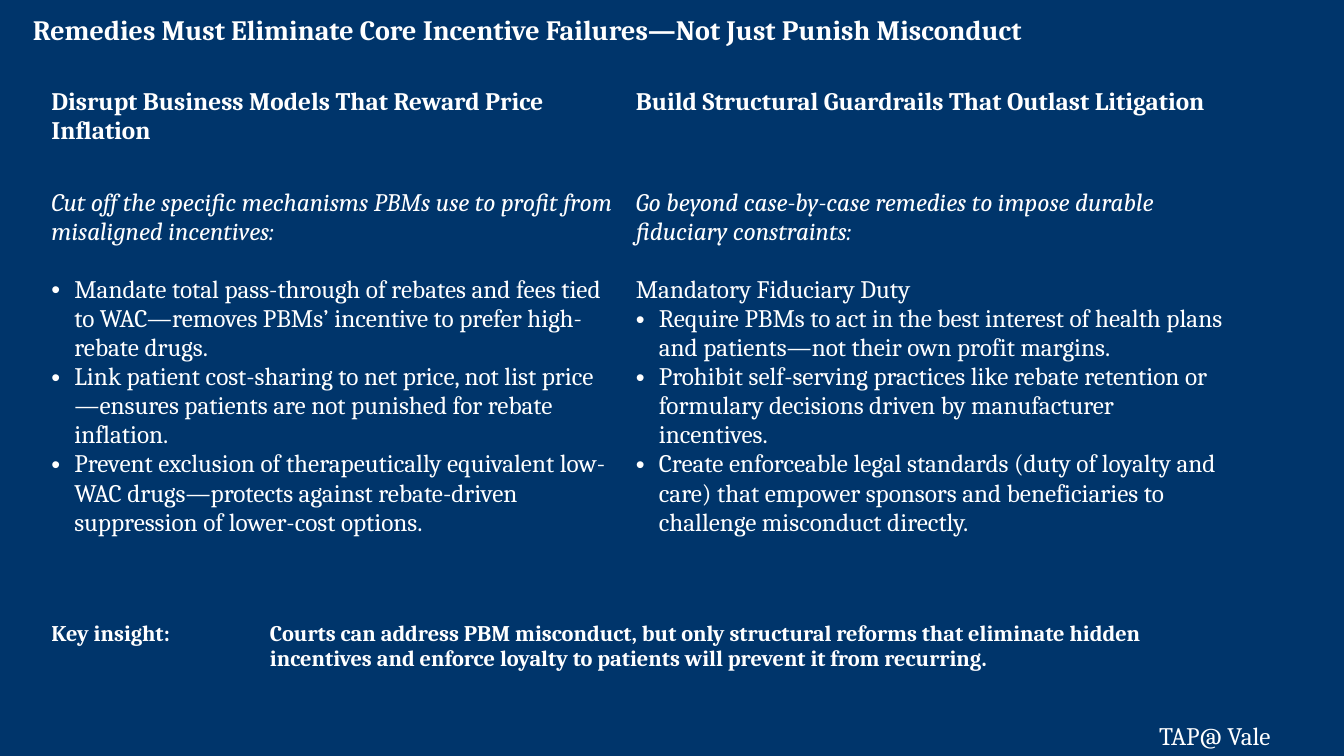
from lxml import etree
from pptx import Presentation
from pptx.dml.color import RGBColor
from pptx.oxml.ns import qn
from pptx.util import Cm, Pt

FONT = "Cambria"
WHITE = "FFFFFF"
NAVY = "00356B"
BLANK_LAYOUT = 6
NO_STYLE_NO_GRID = "{2D5ABB26-0587-4C30-8999-92F81FD0307C}"
TABLE_LEFT = Cm(1.04)
BULLET_INDENT = Cm(0.58)
LINE_GAP = Pt(20.8)


def write(para, text, size, bold=False, italic=False):
    para.text = text
    for span in para.runs:
        span.font.name = FONT
        span.font.size = Pt(size)
        span.font.bold = bold
        span.font.italic = italic
        span.font.color.rgb = RGBColor.from_string(WHITE)


def add_plain_table(page, top, widths, heights):
    frame = page.shapes.add_table(len(heights), len(widths), TABLE_LEFT, top,
                                  sum(widths), sum(heights))
    table = frame.table
    table.first_row = False
    table.horz_banding = False
    table._tbl.tblPr.find(qn("a:tableStyleId")).text = NO_STYLE_NO_GRID
    for column, width in zip(table.columns, widths):
        column.width = width
    for row, height in zip(table.rows, heights):
        row.height = height
    for cell in table.iter_cells():
        cell.fill.background()
    return table


# Deck and navy page
deck = Presentation()
deck.slide_width = Cm(33.87)
deck.slide_height = Cm(19.05)
page = deck.slides.add_slide(deck.slide_layouts[BLANK_LAYOUT])
page.background.fill.solid()
page.background.fill.fore_color.rgb = RGBColor.from_string(NAVY)

# Title
title_box = page.shapes.add_textbox(Cm(0.58), Cm(0.28), Cm(30.84), Cm(1.68))
title_box.text_frame.word_wrap = True
title = title_box.text_frame.paragraphs[0]
title.line_spacing = 0.9
write(title, "Remedies Must Eliminate Core Incentive Failures—Not Just Punish Misconduct",
      20, bold=True)

# Footer
footer_box = page.shapes.add_textbox(Cm(28.96), Cm(18.03), Cm(3.71), Cm(1.02))
footer_box.text_frame.word_wrap = False
write(footer_box.text_frame.paragraphs[0], "TAP@ Vale", 18)

# Two columns of remedies: heading, lead-in, optional subheading, bullets
remedies = [
    ("Disrupt Business Models That Reward Price Inflation",
     "Cut off the specific mechanisms PBMs use to profit from misaligned incentives:",
     [],
     ["Mandate total pass-through of rebates and fees tied to WAC—removes PBMs’ "
      "incentive to prefer high-rebate drugs.",
      "Link patient cost-sharing to net price, not list price—ensures patients are "
      "not punished for rebate inflation.",
      "Prevent exclusion of therapeutically equivalent low-WAC drugs—protects against "
      "rebate-driven suppression of lower-cost options."]),
    ("Build Structural Guardrails That Outlast Litigation",
     "Go beyond case-by-case remedies to impose durable fiduciary constraints:",
     ["Mandatory Fiduciary Duty"],
     ["Require PBMs to act in the best interest of health plans and patients—not "
      "their own profit margins.",
      "Prohibit self-serving practices like rebate retention or formulary decisions "
      "driven by manufacturer incentives.",
      "Create enforceable legal standards (duty of loyalty and care) that empower "
      "sponsors and beneficiaries to challenge misconduct directly."]),
]
remedy_table = add_plain_table(page, Cm(2.08), [Cm(14.73), Cm(15.37)],
                               [Cm(2.54), Cm(10.16)])
for column, (heading, lead_in, subheadings, bullets) in enumerate(remedies):
    write(remedy_table.cell(0, column).text_frame.paragraphs[0], heading, 18, bold=True)
    body = remedy_table.cell(1, column).text_frame
    lead = body.paragraphs[0]
    write(lead, lead_in, 18, italic=True)
    lead.space_after = LINE_GAP
    for subheading in subheadings:
        write(body.add_paragraph(), subheading, 18)
    for bullet in bullets:
        para = body.add_paragraph()
        write(para, bullet, 18)
        properties = para._p.get_or_add_pPr()
        properties.set("marL", str(BULLET_INDENT))
        properties.set("indent", str(-BULLET_INDENT))
        etree.SubElement(properties, qn("a:buFont")).set("typeface", "Arial")
        etree.SubElement(properties, qn("a:buChar")).set("char", "•")

# Key insight
insight = [
    "Key insight:",
    "Courts can address PBM misconduct, but only structural reforms that eliminate "
    "hidden incentives and enforce loyalty to patients will prevent it from recurring.",
]
insight_table = add_plain_table(page, Cm(15.52), [Cm(5.51), Cm(23.93)], [Cm(1.78)])
for cell, text in zip(insight_table.iter_cells(), insight):
    write(cell.text_frame.paragraphs[0], text, 16, bold=True)

deck.save("out.pptx")
